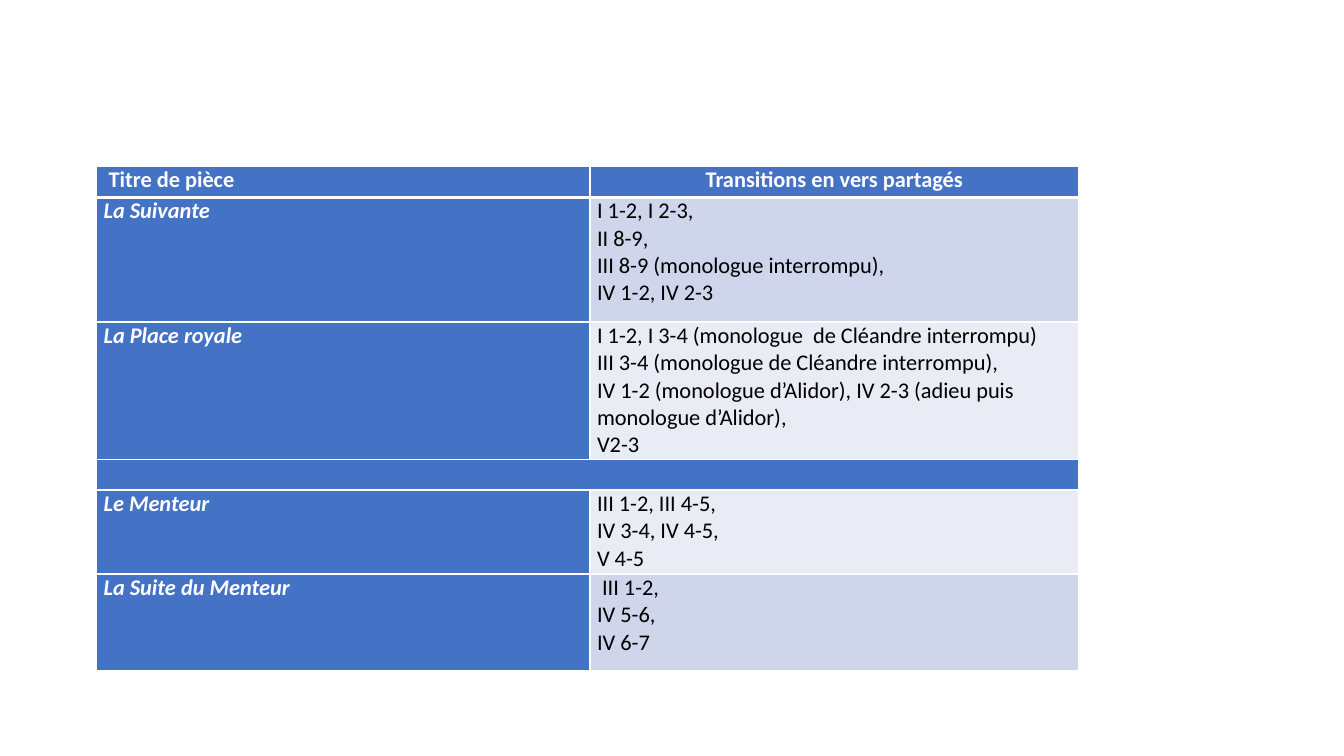
"""Build a slide with a table of shared-verse transitions by play."""
import pptx
import pptx.dml.color
import pptx.enum.text
import pptx.oxml
import pptx.oxml.ns
import pptx.util

Pt = pptx.util.Pt
ALIGN = pptx.enum.text.PP_ALIGN

HEADER = (" Titre de pièce", "Transitions en vers partagés")
ROWS = [
    (HEADER[0], [HEADER[1]], 22),
    ("La Suivante", [
        "I 1-2, I 2-3,",
        "II 8-9,",
        "III 8-9 (monologue interrompu),",
        "IV 1-2, IV 2-3",
    ], 89),
    ("La Place royale", [
        "I 1-2, I 3-4 (monologue  de Cléandre interrompu)",
        "III 3-4 (monologue de Cléandre interrompu),",
        "IV 1-2 (monologue d’Alidor), IV 2-3 (adieu puis monologue d’Alidor),",
        "V2-3",
    ], 98),
    ("", [""], 22),
    ("Le Menteur", ["III 1-2, III 4-5,", "IV 3-4, IV 4-5,", "V 4-5"], 60),
    ("La Suite du Menteur", [" III 1-2,", "IV 5-6,", "IV 6-7"], 69),
]
DIVIDER_ROW = 3
COLORS = {"blue": "4472C4", "odd": "CFD5EA", "even": "E9EBF5",
          "white": "FFFFFF", "black": "000000"}
LEFT, TOP = 69, 119
COLUMN_WIDTHS = (352.5, 349)
MARGINS = {"margin_left": Pt(5), "margin_right": Pt(5),
           "margin_top": 0, "margin_bottom": 0}
BASE_FONT = {"name": "Calibri", "size": Pt(16)}


def rgb(name):
    return pptx.dml.color.RGBColor.from_string(COLORS[name])


def set_all(target, values):
    for name, value in values.items():
        setattr(target, name, value)


def add_borders(cell, widths):
    properties = cell._tc.get_or_add_tcPr()
    for position, (side, width) in enumerate(widths.items()):
        properties.insert(position, pptx.oxml.parse_xml(
            f'<a:ln{side} {pptx.oxml.ns.nsdecls("a")} w="{Pt(width)}">'
            f'<a:solidFill><a:srgbClr val="{COLORS["white"]}"/></a:solidFill>'
            f'</a:ln{side}>'))


def fill_cell(cell, lines, fill, color, font, align):
    set_all(cell, MARGINS)
    cell.fill.solid()
    cell.fill.fore_color.rgb = rgb(fill)
    frame = cell.text_frame
    for index, line in enumerate(lines):
        para = frame.add_paragraph() if index else frame.paragraphs[0]
        para.alignment = align
        target = para
        if line:
            target = para.add_run()
            target.text = line
        set_all(target.font, {**BASE_FONT, **font})
        target.font.color.rgb = rgb(color)


def main():
    deck = pptx.Presentation()
    set_all(deck, {"slide_width": Pt(960), "slide_height": Pt(540)})
    slide = deck.slides.add_slide(deck.slide_layouts[6])
    heights = [height for _, _, height in ROWS]
    table = slide.shapes.add_table(
        len(ROWS), len(COLUMN_WIDTHS), Pt(LEFT), Pt(TOP),
        Pt(sum(COLUMN_WIDTHS)), Pt(sum(heights))).table
    for column, width in zip(table.columns, COLUMN_WIDTHS):
        column.width = Pt(width)

    for row, (title, transitions, height) in enumerate(ROWS):
        table.rows[row].height = Pt(height)
        heading = row in (0, DIVIDER_ROW)
        band = "odd" if row % 2 else "even"
        title_font = {"bold": True, "italic": not heading}
        fill_cell(table.cell(row, 0), [title], "blue", "white",
                  title_font, ALIGN.LEFT)
        fill_cell(table.cell(row, 1), transitions,
                  "blue" if heading else band,
                  "white" if heading else "black",
                  {"bold": heading, "italic": False},
                  ALIGN.CENTER if heading else ALIGN.LEFT)
        for cell in table.rows[row].cells:
            add_borders(cell, {"L": 1, "R": 1, "T": 3 if row == 1 else 1,
                               "B": 3 if row == 0 else 1})
    table.cell(DIVIDER_ROW, 0).merge(table.cell(DIVIDER_ROW, 1))
    deck.save("out.pptx")


if __name__ == "__main__":
    main()
